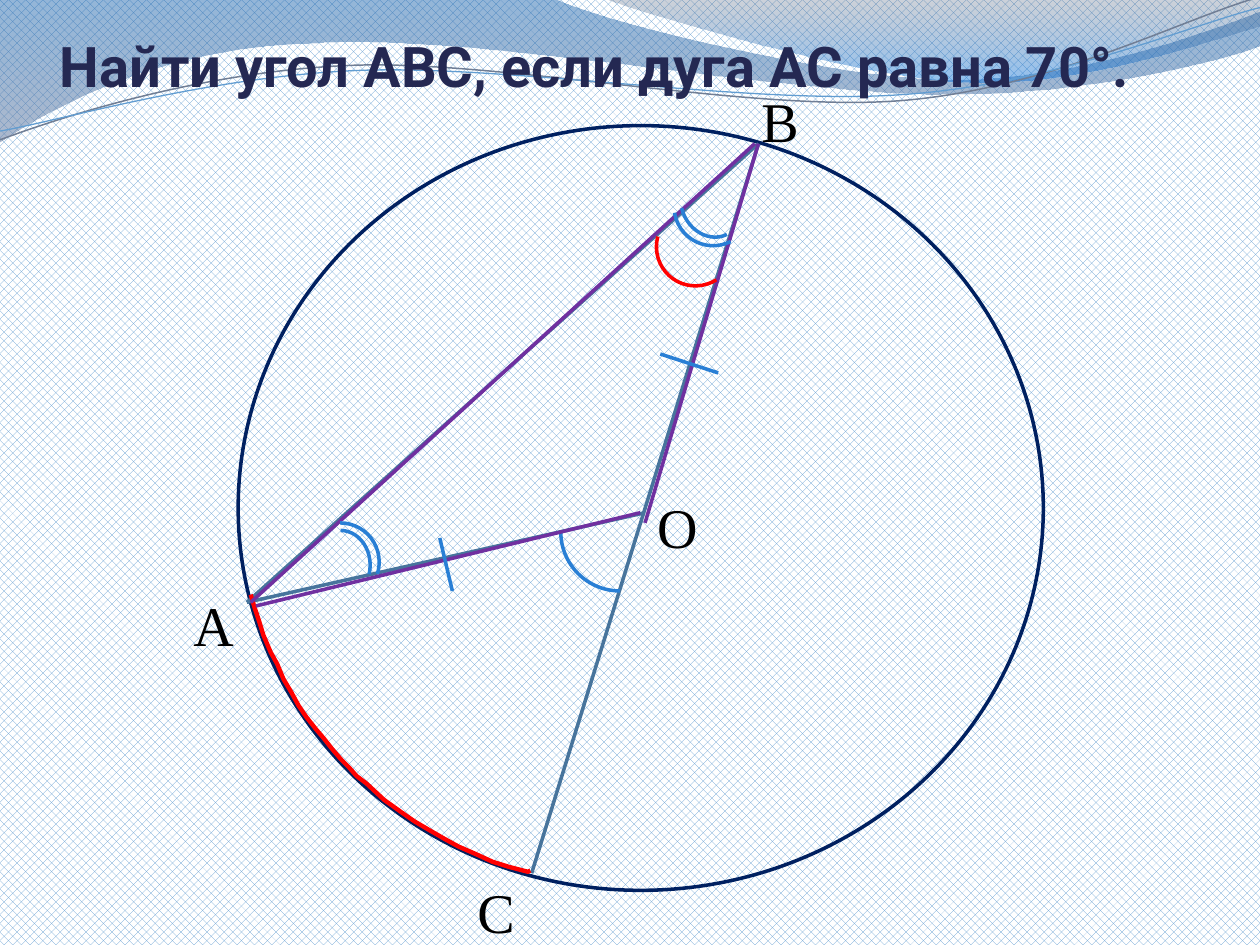
from math import cos, radians, sin

from lxml import etree
from pptx import Presentation
from pptx.dml.color import RGBColor
from pptx.enum.dml import MSO_PATTERN
from pptx.enum.shapes import MSO_CONNECTOR, MSO_SHAPE
from pptx.oxml.ns import qn
from pptx.util import Pt

STRAIGHT = MSO_CONNECTOR.STRAIGHT
ARC = MSO_SHAPE.ARC
OVAL = MSO_SHAPE.OVAL
HALF_PATTERN = MSO_PATTERN.PERCENT_50

NAVY, STEEL, BLUE = "002060", "47749C", "297FD5"
PURPLE, RED = "7030A0", "FF0000"


def color(value):
    return RGBColor.from_string(value)


def write(box, text, size=32, font="Times New Roman", tone="000000", bold=False):
    para = box.text_frame.paragraphs[0]
    span = para.add_run()
    span.text = text
    span.font.size = Pt(size)
    span.font.name = font
    span.font.bold = bold
    span.font.color.rgb = color(tone)


def rotate(point, center, angle):
    turn = radians(angle)
    x, y = point[0] - center[0], point[1] - center[1]
    return (center[0] + x * cos(turn) - y * sin(turn),
            center[1] + x * sin(turn) + y * cos(turn))


class Drawing:
    line_width = 2

    def __init__(self, page):
        self.page = page

    def background(self, front, back):
        fill = self.page.background.fill
        fill.patterned()
        fill.pattern = HALF_PATTERN
        fill.fore_color.rgb = color(front)
        fill.back_color.rgb = color(back)

    def outline(self, shape, tone, width):
        shape.line.color.rgb = color(tone)
        shape.line.width = Pt(width)

    def freeform(self, start, segments, closed):
        anchors = [(Pt(x), Pt(y)) for x, y in (start, *[part[-1] for part in segments])]
        builder = self.page.shapes.build_freeform(*anchors[0])
        builder.add_line_segments(anchors[1:], close=closed)
        shape = builder.convert_to_shape()
        shape.shadow.inherit = False
        edges = list(shape.element.spPr.iter(qn("a:lnTo")))
        for edge, segment in zip(edges, segments):
            if len(segment) == 3:
                edge.tag = qn("a:cubicBezTo")
                edge.clear()
                for x, y in segment:
                    point = etree.SubElement(edge, qn("a:pt"))
                    point.set("x", str(Pt(x) - shape.left))
                    point.set("y", str(Pt(y) - shape.top))
        return shape

    def wave(self, start, segments, stops):
        shape = self.freeform(start, segments, True)
        shape.line.fill.background()
        shape.fill.gradient()
        shape.fill.gradient_angle = 270
        for stop, (tone, opacity) in zip(shape.fill.gradient_stops, stops):
            stop.color.rgb = color(tone)
        tones = shape.element.spPr.iter(qn("a:srgbClr"))
        for element, (tone, opacity) in zip(tones, stops):
            etree.SubElement(element, qn("a:alpha")).set("val", str(opacity * 1000))

    def trace(self, start, segments, tone, width):
        shape = self.freeform(start, segments, False)
        shape.fill.background()
        self.outline(shape, tone, width)
        return shape

    def tilted_trace(self, start, segments, tone, width, center, turn=357.3):
        flat = [[rotate(point, center, -turn) for point in part] for part in segments]
        shape = self.trace(rotate(start, center, -turn), flat, tone, width)
        shape.rotation = turn

    def line(self, start, end, tone):
        ends = [Pt(value) for value in (*start, *end)]
        connector = self.page.shapes.add_connector(STRAIGHT, *ends)
        self.outline(connector, tone, self.line_width)
        etree.SubElement(connector.element.spPr, qn("a:effectLst"))

    def round(self, kind, bounds, tone, turn=0, sweep=None):
        shape = self.page.shapes.add_shape(kind, *[Pt(value) for value in bounds])
        shape.shadow.inherit = False
        shape.fill.background()
        self.outline(shape, tone, self.line_width)
        shape.rotation = turn
        if sweep is not None:
            shape.adjustments[0] = 162
            shape.adjustments[1] = sweep

    def text(self, bounds, text, wrap=False, **style):
        box = self.page.shapes.add_textbox(*[Pt(value) for value in bounds])
        box.text_frame.word_wrap = wrap
        write(box, text, **style)


def draw_waves(drawing):
    drawing.wave((0, 0), [
        [(316.8, -0.7)],
        [(342.7, 12.2), (478, 45.4), (545.8, 45.4)],
        [(614.2, 45.4), (689.8, 18.7), (720, 6.5)],
        [(720.7, 25.9)],
        [(707.8, 31.7), (626.4, 54.7), (537.1, 54)],
        [(447.8, 54), (275, 20.2), (185, 24.5)],
        [(92.9, 25.9), (33.1, 59.8), (-0.7, 81.4)],
    ], [("125EAA", 45), ("697FA4", 55)])
    drawing.wave((344.9, -0.7), [
        [(366.5, 7.2), (491, 44.6), (553.7, 46.8)],
        [(616.3, 49.7), (691.9, 23), (720, 15.1)],
        [(720, 0)],
    ], [("596982", 30), ("0670DA", 45)])
    drawing.tilted_trace((0, 79.9), [
        [(34.6, 67), (113.8, 41), (199.4, 37.4)],
        [(284.4, 33.8), (427, 64.1), (513.4, 57.6)],
        [(599.8, 51.1), (675.4, 10.8), (718.6, -1.4)],
    ], "707E95", 0.85, center=(359.3, 41.4))
    drawing.tilted_trace((0, 74.9), [
        [(33.8, 69.1), (118.1, 43.9), (203.8, 40.3)],
        [(290.2, 36.7), (429.8, 60.5), (516.2, 54)],
        [(601.9, 48.2), (677.5, 15.1), (720, 4.3)],
    ], "629DD1", 0.75, center=(359.6, 42.5))


def draw_circle(drawing):
    a, b, c, o = (141.1, 344.2), (433.4, 82.1), (303.8, 499), (368.6, 293)
    drawing.round(OVAL, (136.1, 71.8, 460.1, 437), NAVY)
    for start, end in ((b, c), (b, a), (a, o)):
        drawing.line(start, end, STEEL)
    for letter, left, top, width in (("В", 428, 46.1, 34.6), ("О", 368.4, 277.6, 36.7),
                                     ("А", 103.4, 334.1, 36.7), ("С", 265.7, 498, 34.6)):
        drawing.text((left, top, width, 41.8), letter)
    arc = [
        (143.3, 339.8), (145.4, 347), (148.3, 355.7), (150.5, 362.9), (154.8, 373),
        (158.4, 379.4), (162, 388.1), (166.3, 395.3), (170.6, 403.2), (175, 409.7),
        (180.7, 416.9), (185, 421.9), (190.1, 428.4), (195.1, 434.2), (199.4, 438.5),
        (203.8, 443.5), (209.5, 447.8), (219.6, 457.2), (229.7, 464.4), (236.9, 469.4),
        (245.5, 474.5), (254.2, 479.5), (262.1, 483.8), (272.2, 488.2), (281.5, 492.5),
        (290.9, 495.4), (301.7, 498.2), (303.1, 497.5),
    ]
    drawing.trace(arc[0], [[point] for point in arc[1:]], RED, 2.5)


def draw_marks(drawing):
    drawing.round(ARC, (320.4, 270, 67.7, 67.7), BLUE, turn=180)
    for start, end in (((365.8, 293), (146.2, 346.3)),
                       ((433.4, 82.1), (368.6, 298.8)),
                       ((431.3, 82.1), (143.3, 344.2))):
        drawing.line(start, end, PURPLE)
    for start, end in (((251.3, 307.4), (258.5, 337.7)),
                       ((377.3, 202.3), (410.4, 213.1))):
        drawing.line(start, end, BLUE)
    small, large = (33.8, 39.6), (44.6, 44.6)
    for corner, size, tone, turn, sweep in (
            ((177.8, 303.1), small, BLUE, 0, 10.65),
            ((172.1, 298.8), large, BLUE, 0, 10.65),
            ((389.5, 96.5), small, BLUE, 153.3, 10.65),
            ((385.2, 95.8), large, BLUE, 153.3, 10.65),
            ((375.1, 118.8), large, RED, 147.7, 28.61)):
        drawing.round(ARC, (*corner, *size), tone, turn, sweep)


def main():
    deck = Presentation()
    deck.slide_width, deck.slide_height = Pt(720), Pt(540)
    drawing = Drawing(deck.slides.add_slide(deck.slide_layouts[6]))
    drawing.background("629DD1", "FFFFFF")
    draw_waves(drawing)
    drawing.text((27, 14.4, 671.8, 74.9), "Найти угол АВС, если дуга АС равна 70°.",
                 wrap=True, font="Roboto", tone="242852", bold=True)
    draw_circle(drawing)
    draw_marks(drawing)
    deck.save("out.pptx")


if __name__ == "__main__":
    main()
